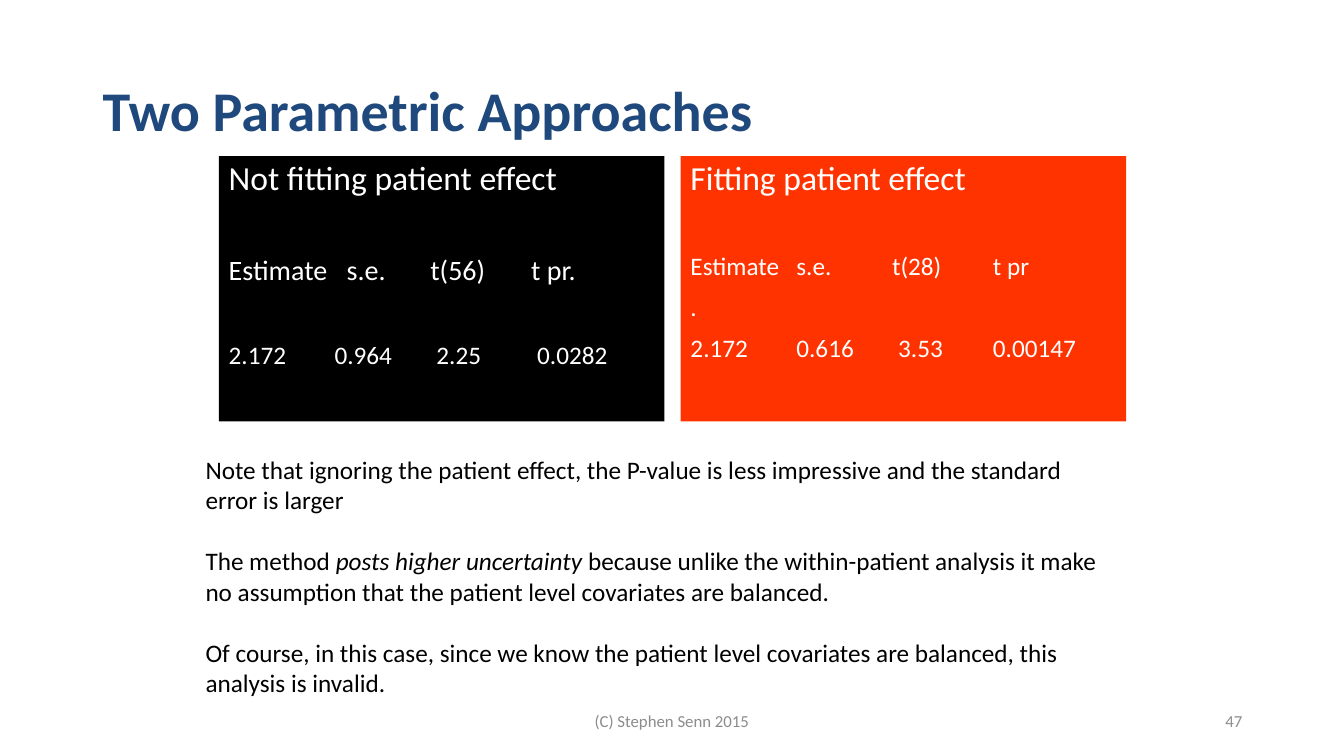
from dataclasses import dataclass

from lxml import etree
from pptx import Presentation
from pptx.dml.color import RGBColor
from pptx.enum.shapes import MSO_SHAPE
from pptx.enum.text import MSO_ANCHOR as ANCHOR, PP_ALIGN as ALIGN
from pptx.oxml.ns import qn
from pptx.util import Inches, Pt


@dataclass(frozen=True)
class Theme:
    font: str = "Calibri"
    title: str = "1F497D"
    ink: str = "000000"
    light: str = "FFFFFF"
    muted: str = "8C8C8C"
    black: str = "000000"
    red: str = "FF3300"
    title_size: int = 40
    heading_size: int = 24
    large_size: int = 20
    body_size: int = 18
    footer_size: int = 12


THEME = Theme()


def add_para(tf, text, *, size, color, bold=False, italic="", align=ALIGN.LEFT,
             line=1.0, before=0, tabs=()):
    """Add a paragraph; the phrase given as italic is set in italics."""
    p = tf.paragraphs[0]
    if p.runs:
        p = tf.add_paragraph()
    p.alignment, p.line_spacing, p.space_before = align, line, Pt(before)
    head, phrase, tail = text.partition(italic) if italic else (text, "", "")
    for part in (head, phrase, tail):
        if part:
            r = p.add_run()
            r.text = part
            f = r.font
            f.name, f.size, f.bold = THEME.font, Pt(size), bold
            f.italic = part == phrase
            f.color.rgb = RGBColor.from_string(color)
    if tabs:
        tab_list = etree.SubElement(p._p.get_or_add_pPr(), qn("a:tabLst"))
        for pos in tabs:
            etree.SubElement(tab_list, qn("a:tab"), pos=str(Inches(pos)), algn="l")


def add_box(slide, box, anchor=ANCHOR.TOP):
    tf = slide.shapes.add_textbox(*map(Inches, box)).text_frame
    tf.word_wrap = True
    tf.vertical_anchor = anchor
    return tf


def add_title(slide, box, text):
    tf = add_box(slide, box, ANCHOR.MIDDLE)
    add_para(tf, text, size=THEME.title_size, color=THEME.title, bold=True, line=0.9)


def add_panel(slide, box, fill, heading, rows):
    """Rows hold text, type size, space before and tab stops."""
    sp = slide.shapes.add_shape(MSO_SHAPE.RECTANGLE, *map(Inches, box))
    sp.shadow.inherit = False
    sp.fill.solid()
    sp.fill.fore_color.rgb = RGBColor.from_string(fill)
    sp.line.fill.background()
    tf = sp.text_frame
    tf.word_wrap = True
    tf.vertical_anchor = ANCHOR.TOP
    add_para(tf, heading, size=THEME.heading_size, color=THEME.light, line=0.9, before=10)
    for text, size, before, tabs in rows:
        add_para(tf, text, size=size, color=THEME.light, line=0.9,
                 before=before, tabs=tabs)


def add_notes_text(slide, box, notes):
    tf = add_box(slide, box)
    for i, (text, italic) in enumerate(notes):
        add_para(tf, text, size=THEME.body_size, color=THEME.ink,
                 italic=italic, before=22 if i else 0)


def add_footer(slide, box, text, align):
    tf = add_box(slide, box, ANCHOR.MIDDLE)
    add_para(tf, text, size=THEME.footer_size, color=THEME.muted, align=align)


def main():
    prs = Presentation()
    prs.slide_width, prs.slide_height = Inches(13.33), Inches(7.5)
    slide = prs.slides.add_slide(prs.slide_layouts[6])

    add_title(slide, (0.92, 0.4, 11.5, 1.45), "Two Parametric Approaches")

    # Result panels, side by side
    large, body = THEME.large_size, THEME.body_size
    panels = [
        (THEME.black, "Not fitting patient effect", [
            ("Estimate\ts.e.\tt(56)\tt pr.", large, 42, (1.17, 2, 3)),
            ("2.172\t0.964\t2.25\t0.0282", body, 40, (1.05, 2.06, 3.06))]),
        (THEME.red, "Fitting patient effect", [
            ("Estimate\ts.e.\tt(28)\tt pr", body, 40, (1.05, 2, 3)),
            (".", body, 10, ()),
            ("2.172\t0.616\t3.53\t0.00147", body, 10, (1.05, 2.06, 3))]),
    ]
    width, gap = 4.42, 0.16
    for i, (fill, heading, rows) in enumerate(panels):
        box = (2.17 + i * (width + gap), 1.55, width, 2.63)
        add_panel(slide, box, fill, heading, rows)

    # Commentary
    add_notes_text(slide, (1.94, 4.46, 9.22, 2.52), [
        ("Note that ignoring the patient effect, the P-value is less impressive "
         "and the standard error is larger", ""),
        ("The method posts higher uncertainty because unlike the within-patient "
         "analysis it make no assumption that the patient level covariates are "
         "balanced.", "posts higher uncertainty"),
        ("Of course, in this case, since we know the patient level covariates are "
         "balanced, this analysis is invalid.", ""),
    ])

    # Footer
    add_footer(slide, (5.08, 6.95, 3.17, 0.4), "(C) Stephen Senn 2015", ALIGN.CENTER)
    add_footer(slide, (9.42, 6.95, 3, 0.4), "47", ALIGN.RIGHT)

    prs.save("out.pptx")


if __name__ == "__main__":
    main()
